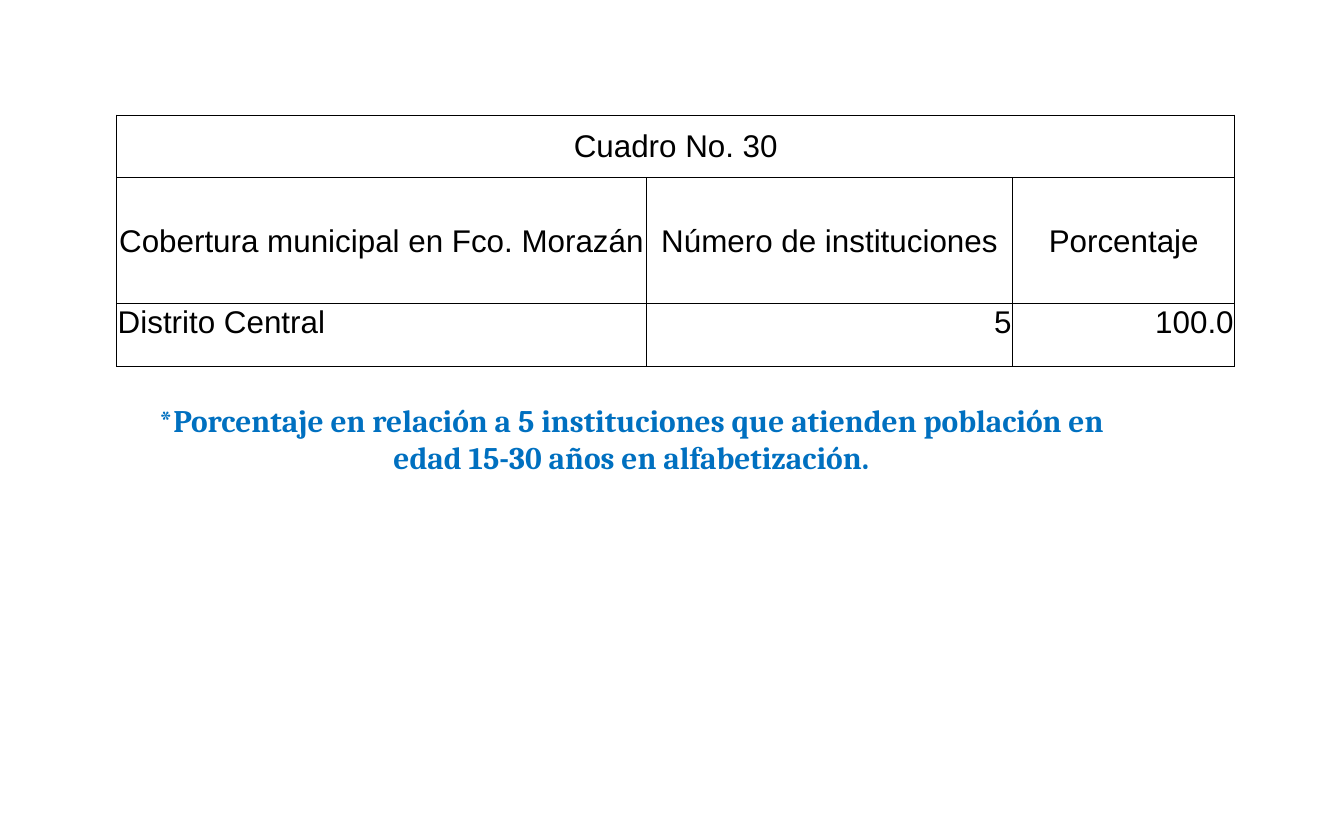
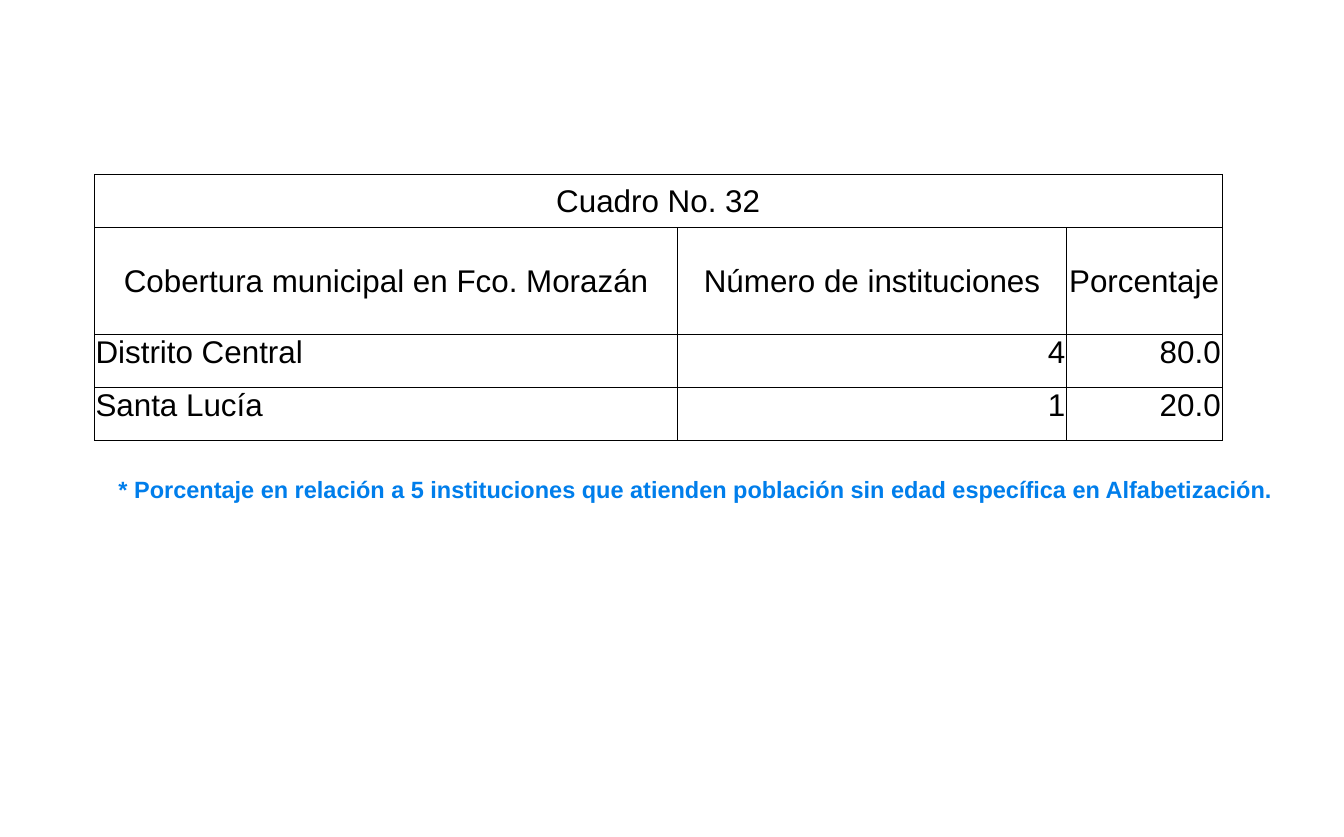
"""Builds two slides of literacy coverage tables with notes."""
from dataclasses import dataclass

from lxml import etree
from pptx import Presentation
from pptx.dml.color import RGBColor
from pptx.enum.text import MSO_ANCHOR, MSO_AUTO_SIZE, PP_ALIGN
from pptx.oxml.ns import qn
from pptx.util import Cm, Pt

LEFT, CENTER, RIGHT = PP_ALIGN.LEFT, PP_ALIGN.CENTER, PP_ALIGN.RIGHT
TOP, MIDDLE = MSO_ANCHOR.TOP, MSO_ANCHOR.MIDDLE
FIT_SHAPE = MSO_AUTO_SIZE.SHAPE_TO_FIT_TEXT
BLANK_LAYOUT = 6
HEADINGS = ["Cobertura municipal en Fco. Morazán", "Número de instituciones", "Porcentaje"]


@dataclass(frozen=True)
class Theme:
    ink: str = "000000"
    blue: str = "0070C0"
    bright_blue: str = "007EEB"
    sans: str = "Arial"
    serif: str = "Cambria"
    large: float = 24
    small: float = 18
    border: float = 0.5


def apply(target, values):
    for name, value in values.items():
        setattr(target, name, value)


class SlideBuilder:
    def __init__(self, deck, theme):
        self.deck = deck
        self.theme = theme
        self.slide = None

    def new_slide(self):
        self.slide = self.deck.slides.add_slide(self.deck.slide_layouts[BLANK_LAYOUT])

    def add_text(self, frame, text, align, color, **font):
        para = frame.paragraphs[0]
        para.alignment = align
        span = para.add_run()
        span.text = text
        apply(span.font, font)
        span.font.color.rgb = RGBColor.from_string(color)

    def border(self, cell):
        properties = cell._tc.get_or_add_tcPr()
        for side in ("lnL", "lnR", "lnT", "lnB"):
            line = etree.SubElement(properties, qn(f"a:{side}"), w=str(Pt(self.theme.border)))
            fill = etree.SubElement(line, qn("a:solidFill"))
            etree.SubElement(fill, qn("a:srgbClr"), val=self.theme.ink)

    def cell(self, cell, text, align, anchor):
        apply(cell, {
            "margin_left": Cm(0.03), "margin_right": Cm(0.03),
            "margin_top": Cm(0.03), "margin_bottom": 0, "vertical_anchor": anchor,
        })
        self.border(cell)
        cell.fill.background()
        if text:
            theme = self.theme
            self.add_text(cell.text_frame, text, align, theme.ink,
                          name=theme.sans, size=Pt(theme.large))

    def table(self, caption, records, left, top, widths, row_height):
        rows = [[caption, "", ""], HEADINGS, *records]
        heights = [row_height * (2 if row is HEADINGS else 1) for row in rows]
        table = self.slide.shapes.add_table(
            len(rows), len(widths), Cm(left), Cm(top), Cm(sum(widths)), Cm(sum(heights))).table
        apply(table, {"first_row": False, "horz_banding": False})
        for column, width in zip(table.columns, widths):
            column.width = Cm(width)
        for row, height in zip(table.rows, heights):
            row.height = Cm(height)
        table.cell(0, 0).merge(table.cell(0, len(widths) - 1))
        for r, row in enumerate(rows):
            heading = r < 2
            for c, text in enumerate(row):
                align = CENTER if heading else RIGHT if c else LEFT
                self.cell(table.cell(r, c), text, align, MIDDLE if heading else TOP)

    def note(self, text, left, top, width, height, align, color, font, size):
        box = self.slide.shapes.add_textbox(Cm(left), Cm(top), Cm(width), Cm(height))
        apply(box.text_frame, {"word_wrap": True, "auto_size": FIT_SHAPE})
        self.add_text(box.text_frame, text, align, color, name=font, size=Pt(size), bold=True)


def main():
    deck = Presentation()
    apply(deck, {"slide_width": Cm(36.3), "slide_height": Cm(22.6)})
    theme = Theme()
    builder = SlideBuilder(deck, theme)

    builder.new_slide()
    builder.table("Cuadro No. 30", [["Distrito Central", "5", "100.0"]],
                  3.15, 3.1, [14.3, 9.9, 6], 1.7)
    builder.note("*Porcentaje en relación a 5 instituciones que atienden población en "
                 "edad 15-30 años en alfabetización.",
                 3.15, 10.7, 27.8, 2.3, CENTER, theme.blue, theme.serif, theme.large)

    builder.new_slide()
    builder.table("Cuadro No. 32",
                  [["Distrito Central", "4", "80.0"], ["Santa Lucía", "1", "20.0"]],
                  2.55, 4.7, [15.75, 10.5, 4.2], 1.44)
    builder.note("* Porcentaje en relación a 5 instituciones que atienden población "
                 "sin edad específica en Alfabetización.",
                 2.95, 12.7, 31.8, 1, LEFT, theme.bright_blue, theme.sans, theme.small)

    deck.save("out.pptx")


if __name__ == "__main__":
    main()
